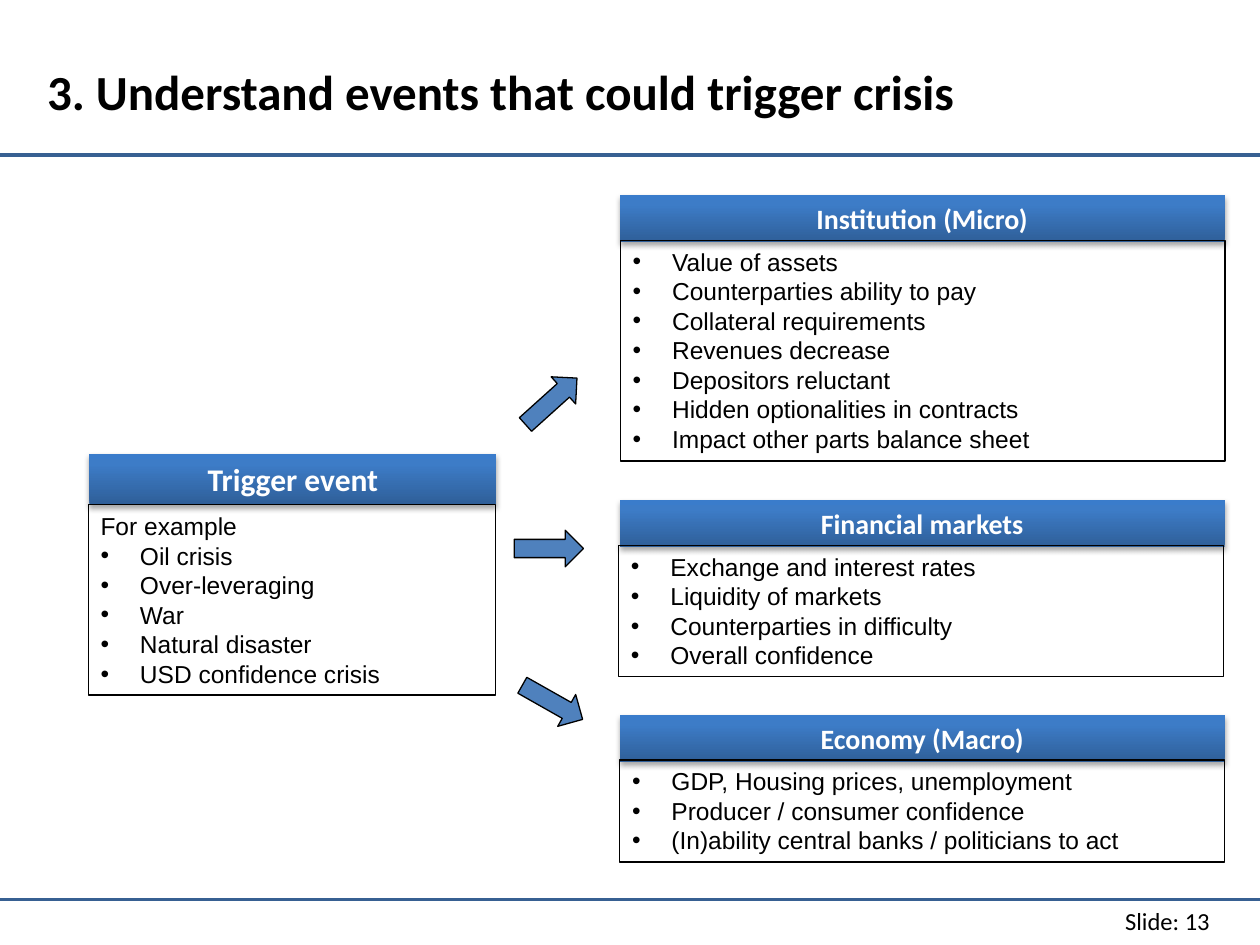
from lxml.etree import SubElement
from pptx import Presentation
from pptx.dml.color import RGBColor
from pptx.enum.shapes import MSO_CONNECTOR, MSO_SHAPE
from pptx.enum.text import MSO_ANCHOR, MSO_AUTO_SIZE, PP_ALIGN
from pptx.oxml import parse_xml
from pptx.oxml.ns import nsdecls, qn
from pptx.util import Pt

BLACK = RGBColor(0x00, 0x00, 0x00)
WHITE = RGBColor(0xFF, 0xFF, 0xFF)
RULE_BLUE = RGBColor(0x37, 0x60, 0x92)
ARROW_BLUE = RGBColor(0x4F, 0x81, 0xBD)
HEADER_STOPS = ((0, "2F5F99"), (80, "3D7CC7"), (100, "3A7CCB"))
HEADING_FONT = "Calibri"
BODY_FONT = "Arial"
BODY_SIZE = 14
BODY_LEADING = 16.9
BULLET_INDENT = 22.5

# heading, size, header (left, top, width, height), body (left, top, height), intro, bullets
PANELS = (
    ("Trigger event", 18, (51.1, 259.2, 232.6, 29.1), (50.4, 288.4, 108.7), "For example",
     ("Oil crisis", "Over-leveraging", "War", "Natural disaster", "USD confidence crisis")),
    ("Economy (Macro)", 16, (354.2, 408.6, 345.6, 26.7), (354.1, 434.2, 58.3), None,
     ("GDP, Housing prices, unemployment", "Producer / consumer confidence",
      "(In)ability central banks / politicians to act")),
    ("Financial markets", 16, (354.2, 285.8, 345.6, 26.7), (353.5, 311.7, 75), None,
     ("Exchange and interest rates", "Liquidity of markets",
      "Counterparties in difficulty", "Overall confidence")),
    ("Institution (Micro)", 16, (354.2, 111.5, 345.6, 26.7), (354.5, 137.3, 126.2), None,
     ("Value of assets", "Counterparties ability to pay", "Collateral requirements",
      "Revenues decrease", "Depositors reluctant", "Hidden optionalities in contracts",
      "Impact other parts balance sheet")),
)

# left, top, rotation
ARROWS = ((295.2, 218.9, 318), (293.8, 303, 0), (295.9, 390.9, 29.5))


class SlideBuilder:
    """Holds the slide being built and draws its elements in one style."""

    def __init__(self, slide):
        self.shapes = slide.shapes

    def add_span(self, para, text, font, size, color=BLACK, bold=False):
        span = para.add_run()
        span.text = text
        span.font.name = font
        span.font.size = Pt(size)
        span.font.bold = bold
        span.font.color.rgb = color

    def rule(self, top):
        line = self.shapes.add_connector(MSO_CONNECTOR.STRAIGHT, Pt(0), Pt(top), Pt(720), Pt(top))
        line.line.color.rgb = RULE_BLUE
        line.line.width = Pt(2)
        SubElement(line._element.spPr, qn("a:effectLst"))

    def label(self, bounds, text, size, bold=False, align=PP_ALIGN.LEFT,
              anchor=MSO_ANCHOR.TOP, wrap=True):
        box = self.shapes.add_textbox(*map(Pt, bounds))
        frame = box.text_frame
        frame.word_wrap = wrap
        frame.vertical_anchor = anchor
        para = frame.paragraphs[0]
        para.alignment = align
        self.add_span(para, text, HEADING_FONT, size, bold=bold)

    def shape(self, kind, bounds):
        shape = self.shapes.add_shape(kind, *map(Pt, bounds))
        shape.shadow.inherit = False
        shape.fill.background()
        shape.line.color.rgb = BLACK
        shape.line.width = Pt(0.75)
        return shape

    def text_rectangle(self, bounds):
        box = self.shape(MSO_SHAPE.RECTANGLE, bounds)
        frame = box.text_frame
        frame.word_wrap = True
        frame.auto_size = MSO_AUTO_SIZE.SHAPE_TO_FIT_TEXT
        frame.vertical_anchor = MSO_ANCHOR.TOP
        return box

    def header(self, bounds, text, size):
        """Draw a gradient bar with a soft shadow and a centred heading."""
        box = self.text_rectangle(bounds)
        box.line.fill.background()
        properties = box._element.spPr
        stops = "".join(f'<a:gs pos="{place * 1000}"><a:srgbClr val="{color}"/></a:gs>'
                        for place, color in HEADER_STOPS)
        gradient = parse_xml(f'<a:gradFill {nsdecls("a")} rotWithShape="1"><a:gsLst>{stops}</a:gsLst>'
                             '<a:lin ang="16200000" scaled="0"/></a:gradFill>')
        properties.replace(properties.find(qn("a:noFill")), gradient)
        properties.find(qn("a:effectLst")).append(parse_xml(
            f'<a:outerShdw {nsdecls("a")} blurRad="40000" dist="23000" dir="5400000" '
            'rotWithShape="0"><a:srgbClr val="000000"><a:alpha val="35000"/></a:srgbClr>'
            '</a:outerShdw>'))
        para = box.text_frame.paragraphs[0]
        para.alignment = PP_ALIGN.CENTER
        self.add_span(para, text, HEADING_FONT, size, WHITE, bold=True)

    def bullet(self, para):
        properties = para._p.get_or_add_pPr()
        properties.set("marL", str(Pt(BULLET_INDENT)))
        properties.set("indent", str(-Pt(BULLET_INDENT)))
        SubElement(properties, qn("a:buFont"), typeface=BODY_FONT)
        SubElement(properties, qn("a:buChar"), char="•")

    def body(self, bounds, intro, bullets):
        frame = self.text_rectangle(bounds).text_frame
        lines = ([intro] if intro else []) + list(bullets)
        for index, text in enumerate(lines):
            para = frame.add_paragraph() if index else frame.paragraphs[0]
            if text != intro:
                self.bullet(para)
            para.alignment = PP_ALIGN.LEFT
            para.line_spacing = Pt(BODY_LEADING)
            self.add_span(para, text, BODY_FONT, BODY_SIZE)

    def arrow(self, left, top, rotation):
        arrow = self.shape(MSO_SHAPE.RIGHT_ARROW, (left, top, 39.6, 20.9))
        arrow.fill.solid()
        arrow.fill.fore_color.rgb = ARROW_BLUE
        arrow.rotation = rotation


def main():
    deck = Presentation()
    deck.slide_width, deck.slide_height = Pt(720), Pt(540)
    page = SlideBuilder(deck.slides.add_slide(deck.slide_layouts[6]))

    page.rule(514)
    page.label((632.9, 514.1, 65.5, 24.5), "Slide: 13", 14, align=PP_ALIGN.RIGHT, wrap=False)
    page.rule(88.6)
    page.label((19.8, 15.1, 623.5, 73.4), "3. Understand events that could trigger crisis", 28,
               bold=True, anchor=MSO_ANCHOR.MIDDLE)

    for heading, size, header, (left, top, height), intro, bullets in PANELS:
        page.header(header, heading, size)
        page.body((left, top, header[2], height), intro, bullets)
    for arrow in ARROWS:
        page.arrow(*arrow)

    deck.save("out.pptx")


if __name__ == "__main__":
    main()
